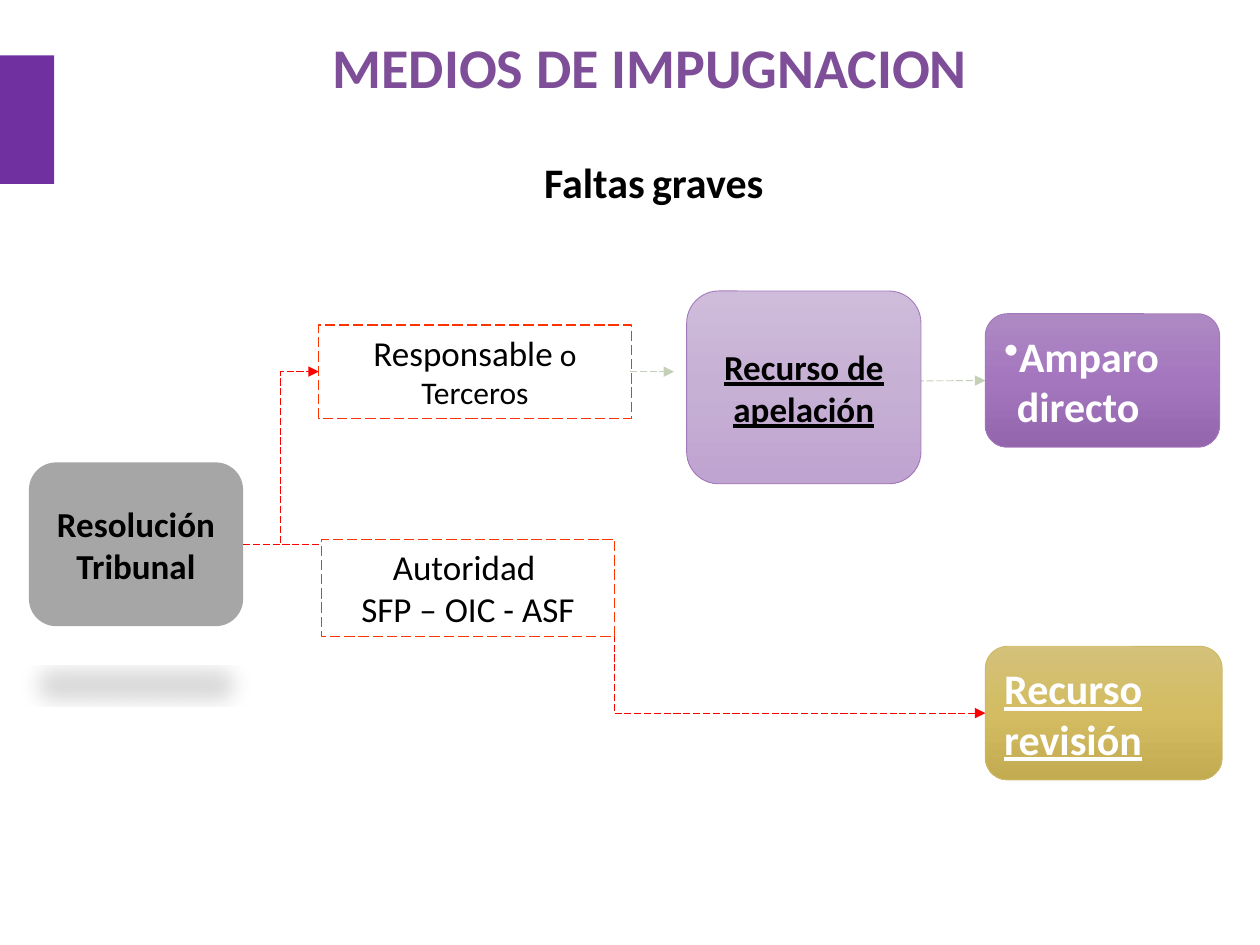
from lxml import etree
from pptx import Presentation
from pptx.dml.color import RGBColor
from pptx.enum.dml import MSO_LINE
from pptx.enum.shapes import MSO_CONNECTOR, MSO_SHAPE
from pptx.enum.text import MSO_ANCHOR, MSO_AUTO_SIZE, PP_ALIGN
from pptx.oxml import parse_xml
from pptx.oxml.ns import nsdecls, qn
from pptx.util import Inches, Pt

RECT = MSO_SHAPE.RECTANGLE
ROUNDED = MSO_SHAPE.ROUNDED_RECTANGLE
STRAIGHT = MSO_CONNECTOR.STRAIGHT
ELBOW = MSO_CONNECTOR.ELBOW
LONG_DASH = MSO_LINE.LONG_DASH
CENTER = PP_ALIGN.CENTER
LEFT = PP_ALIGN.LEFT
TOP = MSO_ANCHOR.TOP
MIDDLE = MSO_ANCHOR.MIDDLE
GROW = MSO_AUTO_SIZE.SHAPE_TO_FIT_TEXT

PURPLE = "7030A0"
TITLE_PURPLE = "7E4E99"
EDGE_PURPLE = "A379BB"
GOLD = "CEB966"
GRAY = "A6A6A6"
SAGE = "C4D0B5"
RED = "FF0000"
ORANGE = "FF3300"
WHITE = "FFFFFF"
BLACK = "000000"


def color(value):
    return RGBColor.from_string(value)


def inches(box):
    return [Inches(length) for length in box]


def style_line(line, value, width, dash=None):
    line.color.rgb = color(value)
    line.width = Pt(width)
    if dash:
        line.dash_style = dash


def write(frame, paragraphs, value=BLACK, align=CENTER, anchor=TOP, bold=False, underline=None):
    frame.word_wrap = True
    frame.vertical_anchor = anchor
    for index, pieces in enumerate(paragraphs):
        paragraph = frame.add_paragraph() if index else frame.paragraphs[0]
        paragraph.alignment = align
        for text, size in pieces:
            run = paragraph.add_run()
            run.text = text
            font = run.font
            font.name = "Calibri"
            font.size = Pt(size)
            font.bold = bold
            font.underline = underline
            font.color.rgb = color(value)


def add_block(slide, kind, box, fill):
    block = slide.shapes.add_shape(kind, *inches(box))
    block.shadow.inherit = False
    block.fill.solid()
    block.fill.fore_color.rgb = color(fill)
    block.line.fill.background()
    return block


def add_gradient_block(slide, box, stops, edge):
    block = add_block(slide, ROUNDED, box, stops[0])
    stop_xml = "".join(
        f'<a:gs pos="{index * 50000}"><a:srgbClr val="{stop}"/></a:gs>'
        for index, stop in enumerate(stops)
    )
    gradient = parse_xml(
        f'<a:gradFill {nsdecls("a")} rotWithShape="1"><a:gsLst>{stop_xml}</a:gsLst>'
        '<a:lin ang="5400000" scaled="0"/></a:gradFill>'
    )
    properties = block._element.spPr
    properties.replace(properties.find(qn("a:solidFill")), gradient)
    style_line(block.line, edge, 0.5)
    return block


def add_party(slide, box, paragraphs):
    party = add_block(slide, RECT, box, WHITE)
    style_line(party.line, ORANGE, 0.75, LONG_DASH)
    write(party.text_frame, paragraphs)
    party.text_frame.auto_size = GROW


def add_arrow(slide, kind, start, end, value):
    arrow = slide.shapes.add_connector(kind, *inches(start + end))
    style_line(arrow.line, value, 0.5, LONG_DASH)
    line = arrow.line._get_or_add_ln()
    etree.SubElement(line, qn("a:tailEnd"), type="triangle")
    etree.SubElement(arrow._element.spPr, qn("a:effectLst"))


def add_resolution(slide, box):
    resolution = add_block(slide, ROUNDED, box, GRAY)
    effects = resolution._element.spPr.find(qn("a:effectLst"))
    effects.append(parse_xml(
        f'<a:outerShdw {nsdecls("a")} blurRad="{Pt(12)}" dist="{Pt(25)}" dir="5400000" '
        'sx="90000" sy="-19000" rotWithShape="0">'
        f'<a:srgbClr val="{BLACK}"><a:alpha val="15000"/></a:srgbClr></a:outerShdw>'
    ))
    write(resolution.text_frame, [[("Resolución Tribunal", 20)]], anchor=MIDDLE, bold=True)


def add_appeal(slide, box):
    appeal = add_gradient_block(slide, box, ["CFBCDB", "C6B0D4", "BFA3D0"], EDGE_PURPLE)
    write(appeal.text_frame, [[("Recurso de apelación", 20)]],
          anchor=MIDDLE, bold=True, underline=True)


def add_review(slide, box):
    review = add_gradient_block(slide, box, ["D4C17A", "D3BC61", "C2AB50"], GOLD)
    write(review.text_frame, [[("Recurso revisión", 24)]], WHITE, LEFT, MIDDLE, True, True)


def add_amparo(slide, box):
    amparo = add_gradient_block(slide, box, ["AD89C3", "A476BE", "9365AD"], EDGE_PURPLE)
    properties = amparo.text_frame.paragraphs[0]._p.get_or_add_pPr()
    properties.set("marL", str(Inches(0.1)))
    properties.set("indent", str(Inches(-0.1)))
    etree.SubElement(properties, qn("a:buChar"), char="•")
    write(amparo.text_frame, [[("Amparo directo", 24)]], WHITE, LEFT, MIDDLE, True)


def add_headings(slide, title_box, subtitle_box):
    subtitle = slide.shapes.add_textbox(*inches(subtitle_box)).text_frame
    write(subtitle, [[("Faltas", 24), (" ", 18), ("graves", 24)]], align=LEFT, bold=True)
    subtitle.word_wrap = False
    title = slide.shapes.add_textbox(*inches(title_box)).text_frame
    write(title, [[("MEDIOS DE IMPUGNACION", 32)]], TITLE_PURPLE, bold=True)
    for heading in (subtitle, title):
        heading.auto_size = GROW


def main():
    presentation = Presentation()
    presentation.slide_width = Inches(10)
    presentation.slide_height = Inches(7.5)
    slide = presentation.slides.add_slide(presentation.slide_layouts[6])

    add_block(slide, RECT, (0, 0.44, 0.43, 1.02), PURPLE)
    add_arrow(slide, STRAIGHT, (6.34, 3.03), (7.82, 3.02), SAGE)
    add_resolution(slide, (0.23, 3.67, 1.7, 1.3))
    add_appeal(slide, (5.45, 2.31, 1.86, 1.53))
    add_review(slide, (7.82, 5.13, 1.88, 1.06))
    add_amparo(slide, (7.82, 2.49, 1.86, 1.06))
    add_arrow(slide, ELBOW, (1.93, 4.32), (2.53, 2.95), RED)
    add_arrow(slide, ELBOW, (1.93, 4.32), (7.82, 5.66), RED)
    add_party(slide, (2.55, 4.28, 2.33, 0.77), [[("Autoridad ", 20)], [("SFP – OIC - ASF", 20)]])
    add_party(slide, (2.53, 2.58, 2.48, 0.74), [[("Responsable", 20), (" o Terceros", 18)]])
    add_arrow(slide, STRAIGHT, (5, 2.95), (5.35, 2.95), SAGE)
    add_headings(slide, (2.01, 0.21, 6.3, 0.64), (4.22, 1.19, 1.96, 0.5))

    presentation.save("out.pptx")


if __name__ == "__main__":
    main()
